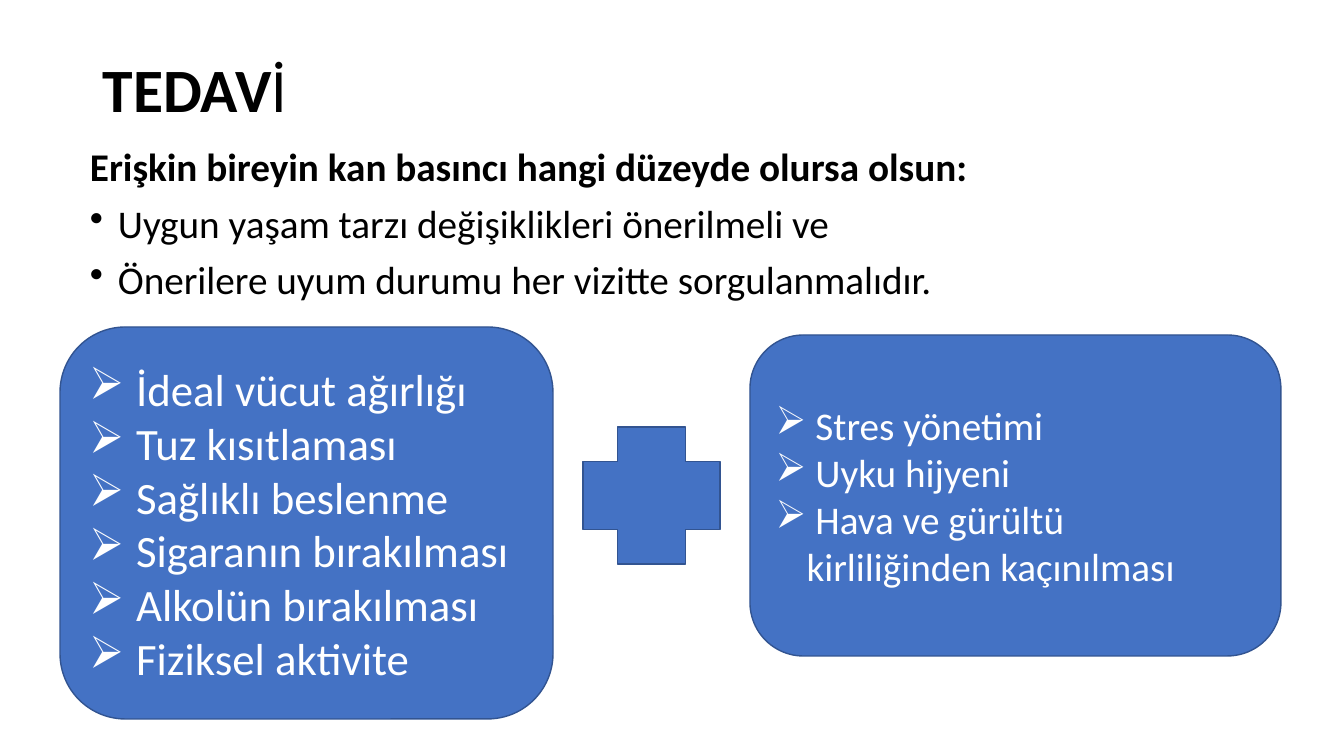
from lxml import etree
from pptx import Presentation
from pptx.dml.color import RGBColor
from pptx.enum.shapes import MSO_SHAPE
from pptx.enum.text import MSO_ANCHOR, PP_ALIGN
from pptx.oxml.ns import qn
from pptx.util import Pt

ROUND, PLUS = MSO_SHAPE.ROUNDED_RECTANGLE, MSO_SHAPE.CROSS
TOP, MIDDLE = MSO_ANCHOR.TOP, MSO_ANCHOR.MIDDLE
LEFT = PP_ALIGN.LEFT
BLACK, WHITE, BLUE, NAVY = "000000", "FFFFFF", "4472C4", "325491"


def px(n):
    return round(n * 914400 / 100.8)


def rgb(code):
    return RGBColor.from_string(code)


def bullet(para, mark, indent):
    """Give a paragraph a bullet mark and a hanging indent in px."""
    props = para._p.get_or_add_pPr()
    props.set("marL", str(px(indent)))
    props.set("indent", str(-px(indent)))
    etree.SubElement(props, qn("a:buChar")).set("char", mark)


class Page:
    font = "Calibri"

    def __init__(self, deck):
        self.slide = deck.slides.add_slide(deck.slide_layouts[6])

    def fill(self, frame, lines, size, color, anchor):
        """Write the lines into a frame, one paragraph each."""
        frame.word_wrap = True
        frame.vertical_anchor = anchor
        frame.text = "\n".join(lines)
        for para in frame.paragraphs:
            para.alignment = LEFT
            for run in para.runs:
                run.font.name = self.font
                run.font.size = Pt(size)
                run.font.color.rgb = rgb(color)
        return frame.paragraphs

    def text(self, box, lines, size, anchor=TOP):
        frame = self.slide.shapes.add_textbox(*map(px, box)).text_frame
        paras = self.fill(frame, lines, size, BLACK, anchor)
        for i, para in enumerate(paras):
            para.line_spacing = 0.9
            para.space_before = Pt(10 if i else 0)
        paras[0].runs[0].font.bold = True
        return paras

    def shape(self, kind, box):
        item = self.slide.shapes.add_shape(kind, *map(px, box))
        item.shadow.inherit = False
        item.fill.solid()
        item.fill.fore_color.rgb = rgb(BLUE)
        item.line.color.rgb = rgb(NAVY)
        item.line.width = Pt(1)
        return item

    def card(self, box, lines, size, indent):
        frame = self.shape(ROUND, box).text_frame
        for para in self.fill(frame, lines, size, WHITE, MIDDLE):
            bullet(para, "➢", indent)


def main():
    deck = Presentation()
    deck.slide_width, deck.slide_height = px(1344), px(756)
    page = Page(deck)

    title = page.text((93, 20, 1159, 146), ["TEDAV"], 44, MIDDLE)[0]
    last = title.add_run()
    last.text = "İ"
    last.font.name = page.font
    last.font.size = Pt(44)
    last.font.color.rgb = rgb(BLACK)

    body = page.text((80, 143, 1172, 587), [
        "Erişkin bireyin kan basıncı hangi düzeyde olursa olsun:",
        "Uygun yaşam tarzı değişiklikleri önerilmeli ve",
        "Önerilere uyum durumu her vizitte sorgulanmalıdır.",
    ], 28)
    for para in body[1:]:
        bullet(para, "•", 28)

    page.card((60, 327, 493, 392), [
        " İdeal vücut ağırlığı",
        " Tuz kısıtlaması",
        " Sağlıklı beslenme",
        " Sigaranın bırakılması",
        " Alkolün bırakılması",
        " Fiziksel aktivite",
    ], 32, 37)
    page.card((750, 335, 531, 321), [
        " Stres yönetimi",
        " Uyku hijyeni",
        " Hava ve gürültü kirliliğinden kaçınılması",
    ], 28, 31)
    page.shape(PLUS, (583, 427, 137, 137))

    deck.save("out.pptx")


if __name__ == "__main__":
    main()
